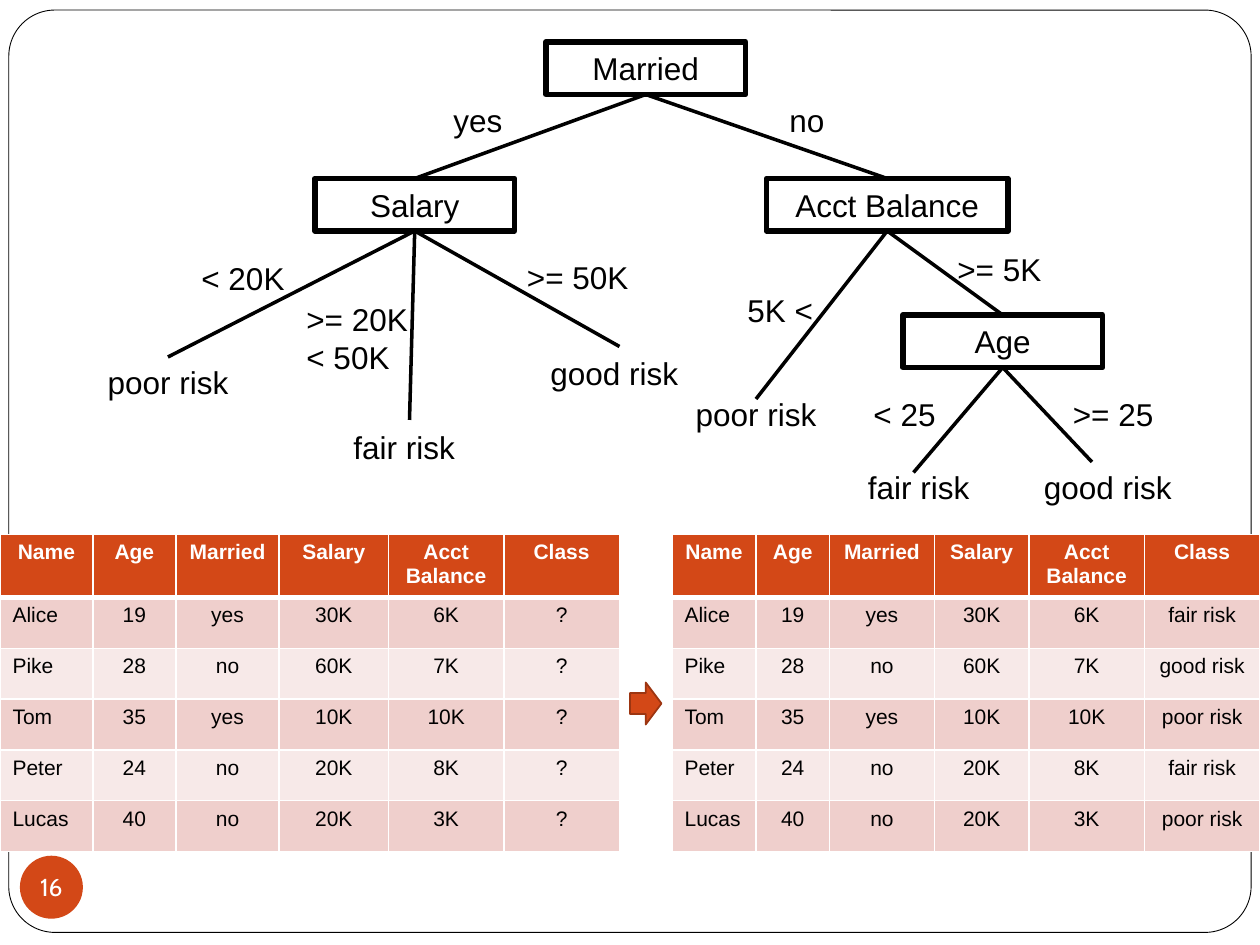
from lxml import etree
from pptx import Presentation
from pptx import util as u
from pptx.dml.color import RGBColor
from pptx.enum import shapes, text
from pptx.oxml.ns import qn

COLORS = {"ink": "000000", "paper": "FFFFFF", "accent": "D34817",
          "accent_dark": "9C3511", "band_dark": "EFCFCC", "band_light": "F7E9E8"}
SHAPES = shapes.MSO_SHAPE
CENTER, LEFT = text.PP_ALIGN.CENTER, text.PP_ALIGN.LEFT
COLUMNS, ROWS = 120, 90  # twelfths of an inch


class TreeSlide:
    """Style and current slide; every length is in grid columns and rows."""

    def __init__(self, deck):
        self.slide = deck.slides.add_slide(deck.slide_layouts[6])
        self.column = deck.slide_width / COLUMNS
        self.row = deck.slide_height / ROWS

    def across(self, columns):
        return u.Emu(round(columns * self.column))

    def down(self, rows):
        return u.Emu(round(rows * self.row))

    def area(self, left, top, width, height):
        return self.across(left), self.down(top), self.across(width), self.down(height)

    def color(self, name):
        return RGBColor.from_string(COLORS[name])

    def set_text(self, frame, words, size=18, color="ink", align=CENTER, font="Arial", bold=False):
        frame.text = words
        for para in frame.paragraphs:
            para.alignment = align
            para.font.name, para.font.size, para.font.bold = font, u.Pt(size), bold
            para.font.color.rgb = self.color(color)

    def shape(self, kind, area, fill=None, line=None, weight=1):
        shape = self.slide.shapes.add_shape(kind, *self.area(*area))
        shape.shadow.inherit = False
        if fill:
            shape.fill.solid()
            shape.fill.fore_color.rgb = self.color(fill)
        else:
            shape.fill.background()
        if line:
            shape.line.color.rgb = self.color(line)
            shape.line.width = u.Pt(weight)
        else:
            shape.line.fill.background()
        return shape

    def node(self, words, left, top, width=19):
        box = self.shape(SHAPES.RECTANGLE, (left, top, width, 5), line="ink", weight=3.25)
        box.text_frame.vertical_anchor = text.MSO_ANCHOR.MIDDLE
        self.set_text(box.text_frame, words)
        return box

    def branch(self, parent, child=None, end=(0, 0)):
        """Line from the bottom of a node to the top of a child node or to a grid point."""
        line = self.slide.shapes.add_connector(
            shapes.MSO_CONNECTOR.STRAIGHT, 0, 0, self.across(end[0]), self.down(end[1]))
        line.begin_connect(parent, 2)
        if child is not None:
            line.end_connect(child, 0)
        line.line.color.rgb = self.color("ink")
        line.line.width = u.Pt(2)
        etree.SubElement(line._element.spPr, qn("a:effectLst"))

    def label(self, words, left, top, width, height=4.8, align=LEFT):
        box = self.slide.shapes.add_textbox(*self.area(left, top, width, height))
        box.text_frame.word_wrap = True
        self.set_text(box.text_frame, words, align=align)

    def border(self, cell, top=1, bottom=1):
        properties = cell._tc.get_or_add_tcPr()
        weights = {"lnL": 1, "lnR": 1, "lnT": top, "lnB": bottom}
        for place, (side, weight) in enumerate(weights.items()):
            line = etree.Element(qn(f"a:{side}"), w=str(u.Pt(weight)))
            fill = etree.SubElement(line, qn("a:solidFill"))
            etree.SubElement(fill, qn("a:srgbClr"), val=COLORS["paper"])
            properties.insert(place, line)

    def table(self, left, top, widths, row_height, records):
        area = self.area(left, top, sum(widths), row_height * len(records))
        table = self.slide.shapes.add_table(len(records), len(widths), *area).table
        for column, width in zip(table.columns, widths):
            column.width = self.across(width)
        for r, record in enumerate(records):
            header = r == 0
            fill = "accent" if header else ("band_light", "band_dark")[r % 2]
            for c, words in enumerate(record):
                cell = table.cell(r, c)
                cell.fill.solid()
                cell.fill.fore_color.rgb = self.color(fill)
                self.border(cell, top=3 if r == 1 else 1, bottom=3 if header else 1)
                self.set_text(cell.text_frame, words, size=12, bold=header,
                              color="paper" if header else "ink",
                              align=CENTER if header or c else LEFT)


HEADER = ("Name", "Age", "Married", "Salary", "Acct Balance", "Class")
PEOPLE = [
    ("Alice", "19", "yes", "30K", "6K"),
    ("Pike", "28", "no", "60K", "7K"),
    ("Tom", "35", "yes", "10K", "10K"),
    ("Peter", "24", "no", "20K", "8K"),
    ("Lucas", "40", "no", "20K", "3K"),
]
RISKS = ("fair risk", "good risk", "poor risk", "fair risk", "poor risk")
CONDITIONS = [
    ("yes", 42, 9, 8), ("no", 74, 9, 8),
    ("< 20K", 18, 24.1, 11), (">= 20K\n< 50K", 28, 28, 13, 8.5), (">= 50K", 49, 24, 14),
    ("5K <", 70, 27.1, 9), (">= 5K", 90, 23.2, 13),
    ("< 25", 82, 37, 9), (">= 25", 101, 37, 11),
]
OUTCOMES = [
    ("poor risk", 9, 34, 14), ("fair risk", 32, 40.2, 13), ("good risk", 51, 33.1, 15),
    ("poor risk", 65, 37, 14), ("fair risk", 81, 44, 13), ("good risk", 98, 44, 15),
]


def draw_tree(page):
    married = page.node("Married", 52, 4)
    salary = page.node("Salary", 30, 17)
    balance = page.node("Acct Balance", 73, 17, 23)
    age = page.node("Age", 86, 30)
    for parent, child in ((married, salary), (married, balance), (balance, age)):
        page.branch(parent, child)
    leaf_ends = ((salary, (16, 34)), (salary, (39, 40)), (salary, (59, 33)),
                 (balance, (72, 38)), (age, (87, 45)), (age, (104, 44)))
    for parent, end in leaf_ends:
        page.branch(parent, end=end)
    for condition in CONDITIONS:
        page.label(*condition)
    for outcome in OUTCOMES:
        page.label(*outcome, align=CENTER)


def draw_tables(page):
    top, row_height = 50.9, 4.84
    tables = (
        (0, (8.85, 7.9, 9.85, 10.4, 11, 11), ["?"] * len(PEOPLE)),
        (64, (8, 7, 10, 9, 11, 11), RISKS),
    )
    for left, widths, classes in tables:
        records = [HEADER] + [(*person, risk) for person, risk in zip(PEOPLE, classes)]
        page.table(left, top, widths, row_height, records)
    page.shape(SHAPES.RIGHT_ARROW, (60, 65, 3, 4), "accent", "accent_dark")


def draw_frame(page):
    frame = page.shape(SHAPES.ROUNDED_RECTANGLE, (0.84, 0.96, 118.32, 87.84), "paper", "ink", 0.5)
    frame.adjustments[0] = 0.05
    badge = page.shape(SHAPES.OVAL, (1.9, 81.5, 6, 6), "accent")
    inside = badge.text_frame
    inside.margin_left = inside.margin_right = inside.margin_top = inside.margin_bottom = 0
    inside.word_wrap = False
    inside.vertical_anchor = text.MSO_ANCHOR.MIDDLE
    page.set_text(inside, "16", size=14, color="paper", font="Cabin")


def main():
    deck = Presentation()
    deck.slide_width, deck.slide_height = u.Inches(10), u.Inches(7.5)
    page = TreeSlide(deck)
    draw_frame(page)
    draw_tree(page)
    draw_tables(page)
    deck.save("out.pptx")


if __name__ == "__main__":
    main()
